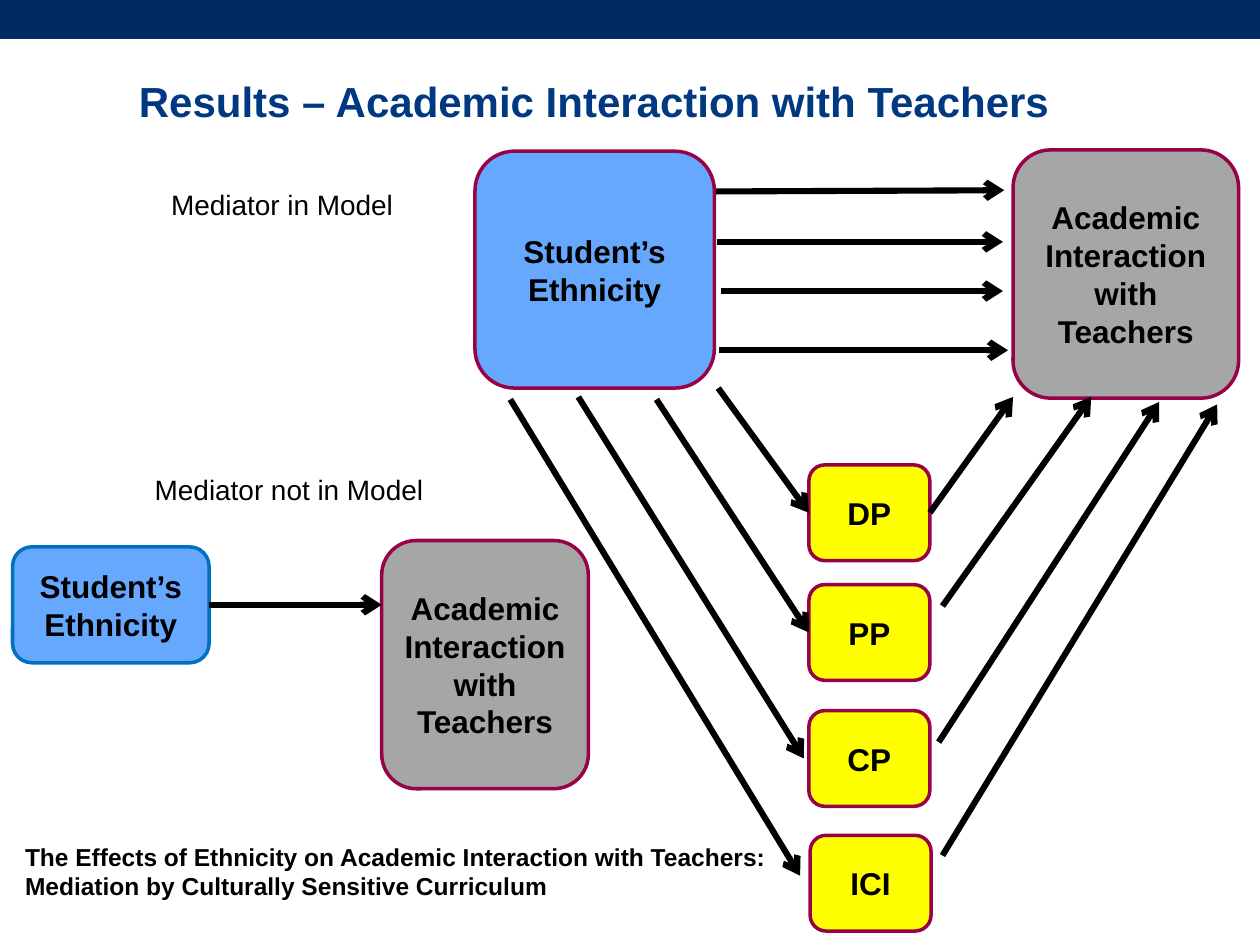
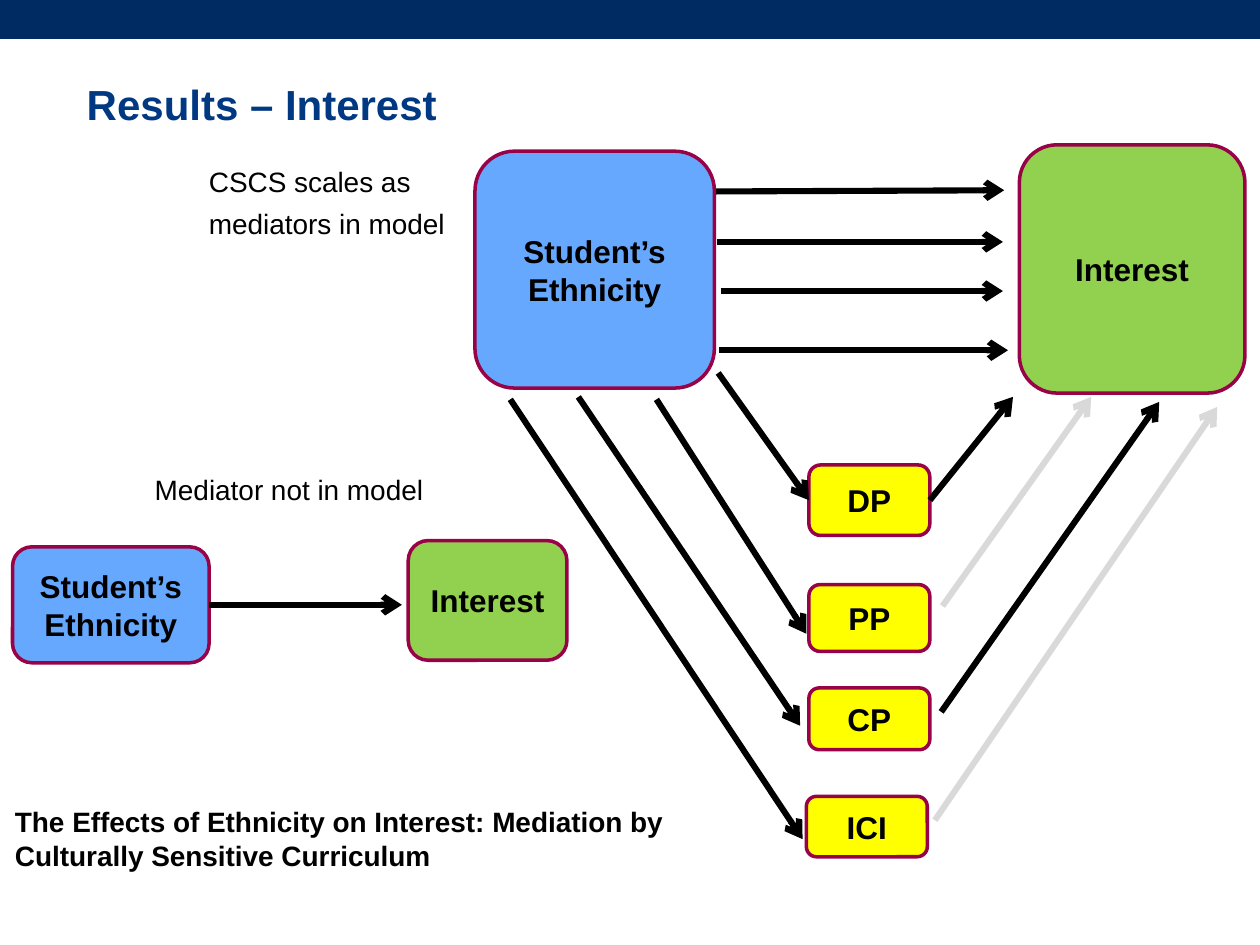
from lxml import etree
from pptx import Presentation
from pptx.dml.color import RGBColor
from pptx.enum.shapes import MSO_CONNECTOR, MSO_SHAPE
from pptx.enum.text import MSO_ANCHOR, MSO_AUTO_SIZE, PP_ALIGN
from pptx.oxml.ns import qn
from pptx.util import Pt

PX = 9144  # 100 px to the inch
LEFT, RIGHT = 1, 3

NAVY, TITLE, BLACK, PALE = "002A62", "003882", "000000", "D9D9D9"
BLUE, GRAY, GREEN, YELLOW = "67A8FF", "A6A6A6", "92D050", "FFFF00"
MAROON, EDGE_BLUE = "980247", "0070C0"

ETHNICITY = "Student’s Ethnicity"
MEDIATORS = ["DP", "PP", "CP", "ICI"]
DIRECT_PATHS = [((569, 192), (796, 192)), ((572, 231), (796, 231)),
                ((571, 278), (800, 278))]


def rgb(color):
    return RGBColor.from_string(color)


def px(*lengths):
    return [length * PX for length in lengths]


class Deck:
    font = "Arial"

    def __init__(self):
        self.prs = Presentation()
        self.prs.slide_width, self.prs.slide_height = px(1000, 750)

    def slide(self):
        """Start a slide with the shared top band."""
        self.s = self.prs.slides.add_slide(self.prs.slide_layouts[6])
        self.shape(MSO_SHAPE.RECTANGLE, (0, 0, 1000, 31), NAVY)

    def shape(self, kind, at, fill, edge=None):
        sp = self.s.shapes.add_shape(kind, *px(*at))
        sp.shadow.inherit = False
        sp.fill.solid()
        sp.fill.fore_color.rgb = rgb(fill)
        if edge:
            sp.line.color.rgb = rgb(edge)
            sp.line.width = Pt(2)
        else:
            sp.line.fill.background()
        return sp

    def set_text(self, tf, text, size, bold=False, color=BLACK, align=PP_ALIGN.LEFT):
        tf.text = text
        for i, p in enumerate(tf.paragraphs):
            p.alignment = align
            p.space_before = Pt(size * 0.3 if i else 0)
            for r in p.runs:
                r.font.name, r.font.size, r.font.bold = self.font, Pt(size), bold
                r.font.color.rgb = rgb(color)

    def box(self, at, text, fill, edge=MAROON):
        sp = self.shape(MSO_SHAPE.ROUNDED_RECTANGLE, at, fill, edge)
        sp.text_frame.vertical_anchor = MSO_ANCHOR.MIDDLE
        self.set_text(sp.text_frame, text, 18, bold=True, align=PP_ALIGN.CENTER)
        return sp

    def text(self, at, text, size=16, bold=False, wrap=False):
        tf = self.s.shapes.add_textbox(*px(*at)).text_frame
        tf.word_wrap = wrap
        tf.auto_size = MSO_AUTO_SIZE.SHAPE_TO_FIT_TEXT
        self.set_text(tf, text, size, bold)

    def title(self, at, text, align=PP_ALIGN.LEFT):
        tf = self.s.shapes.add_textbox(*px(*at)).text_frame
        tf.word_wrap = True
        tf.vertical_anchor = MSO_ANCHOR.BOTTOM
        self.set_text(tf, text, 24, True, TITLE, align)

    def arrow(self, start, end, color=BLACK):
        """Draw an arrow; each end is a point or a (shape, side) pair."""
        ends = [(0, 0) if hasattr(e[0], "text_frame") else e for e in (start, end)]
        c = self.s.shapes.add_connector(
            MSO_CONNECTOR.STRAIGHT, *px(*ends[0], *ends[1]))
        if ends[0] != start:
            c.begin_connect(*start)
        if ends[1] != end:
            c.end_connect(*end)
        c.line.color.rgb = rgb(color)
        c.line.width = Pt(3.5)
        props = c._element.spPr
        etree.SubElement(props.find(qn("a:ln")), qn("a:tailEnd"), type="arrow")
        etree.SubElement(props, qn("a:effectLst"))

    def full_model(self, outcome, fill, outcome_at, mediator_boxes):
        """Draw the model with mediators and return the mediator boxes."""
        self.arrow((563, 152), (797, 151))
        self.box((377, 120, 190, 188), ETHNICITY, BLUE)
        self.box(outcome_at, outcome, fill)
        for start, end in DIRECT_PATHS:
            self.arrow(start, end)
        return [self.box((x, y, 96, h), name, YELLOW)
                for name, (x, y, h) in zip(MEDIATORS, mediator_boxes)]

    def mediated_paths(self, paths):
        for into_start, into_end, out_start, out_end, out_color in paths:
            self.arrow(into_start, into_end)
            self.arrow(out_start, out_end, out_color)

    def simple_model(self, outcome, fill, outcome_at, arrow_end, edge=MAROON):
        ethnicity = self.box((10, 434, 156, 92), ETHNICITY, BLUE, edge)
        self.box(outcome_at, outcome, fill)
        self.arrow((ethnicity, RIGHT), (arrow_end, 480))


def interaction_slide(d):
    d.slide()
    outcome = "Academic Interaction with Teachers"
    dp, pp, *_ = d.full_model(
        outcome, GRAY, (804, 119, 179, 197),
        [(642, 369, 76), (642, 464, 76), (642, 564, 76), (643, 663, 76)])
    d.mediated_paths([
        ((570, 308), (dp, LEFT), (dp, RIGHT), (804, 315), BLACK),
        ((521, 317), (pp, LEFT), (748, 481), (866, 315), BLACK),
        ((459, 315), (638, 602), (745, 589), (920, 319), BLACK),
        ((405, 317), (635, 695), (748, 679), (966, 321), BLACK)])
    d.simple_model(outcome, GRAY, (303, 429, 164, 197), 303, EDGE_BLUE)
    d.text((113, 370, 236, 37), "Mediator not in Model")
    d.text((10, 663, 611, 57),
           "The Effects of Ethnicity on Academic Interaction with Teachers: "
           "Mediation by Culturally Sensitive Curriculum", 14, True, True)
    d.text((126, 144, 205, 37), "Mediator in Model")
    d.title((18, 42, 907, 63), "Results – Academic Interaction with Teachers",
            PP_ALIGN.CENTER)


def interest_slide(d):
    d.slide()
    dp, *_ = d.full_model(
        "Interest", GREEN, (809, 115, 179, 197),
        [(642, 369, 56), (642, 464, 53), (642, 546, 49), (640, 632, 48)])
    d.mediated_paths([
        ((570, 296), (dp, LEFT), (dp, RIGHT), (804, 315), BLACK),
        ((521, 317), (640, 503), (748, 481), (866, 315), PALE),
        ((459, 315), (635, 576), (747, 565), (920, 319), BLACK),
        ((405, 317), (637, 666), (742, 651), (966, 323), PALE)])
    d.simple_model("Interest", GREEN, (324, 429, 126, 95), 319)
    d.text((113, 370, 236, 37), "Mediator not in model")
    d.text((2, 634, 611, 64),
           "The Effects of Ethnicity on Interest: Mediation by "
           "Culturally Sensitive Curriculum", 16, True, True)
    d.title((59, 44, 907, 63), "Results – Interest")
    d.text((156, 126, 210, 72), "CSCS scales as\nmediators in model")


def main():
    d = Deck()
    interaction_slide(d)
    interest_slide(d)
    d.prs.save("out.pptx")


if __name__ == "__main__":
    main()
